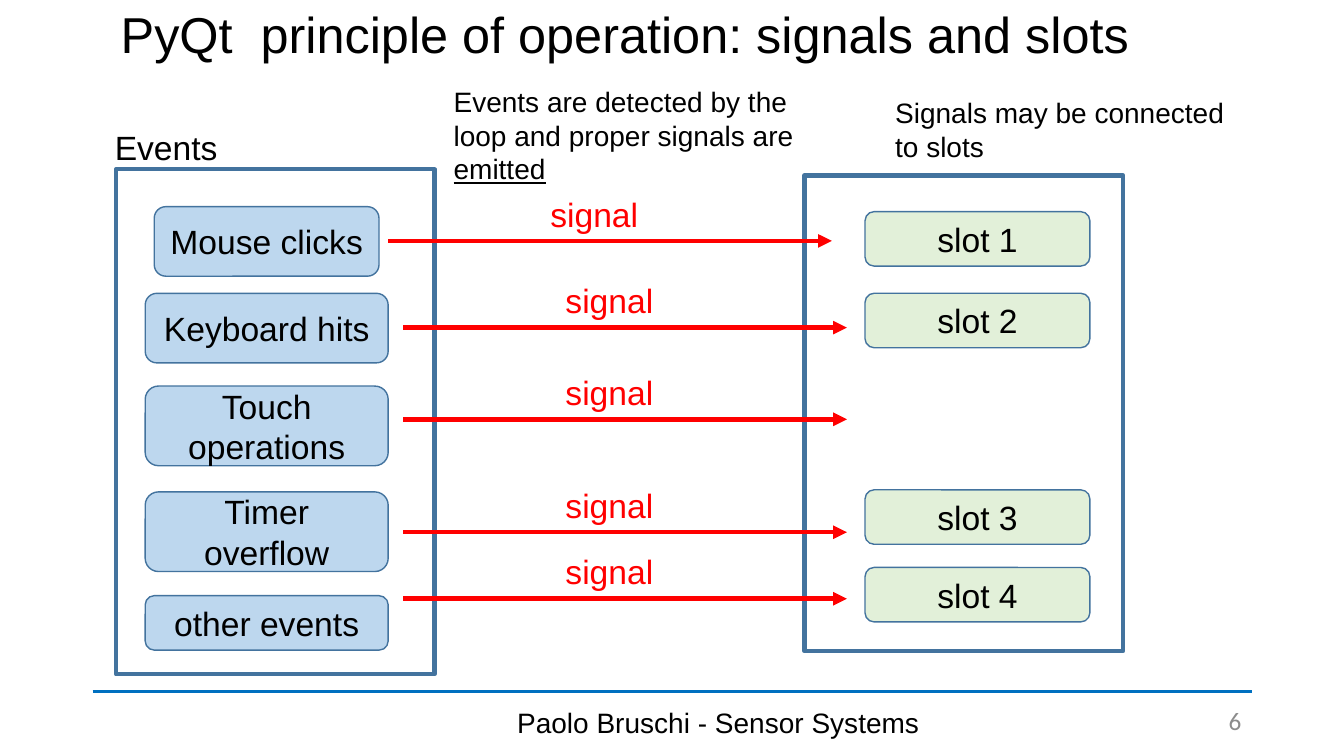
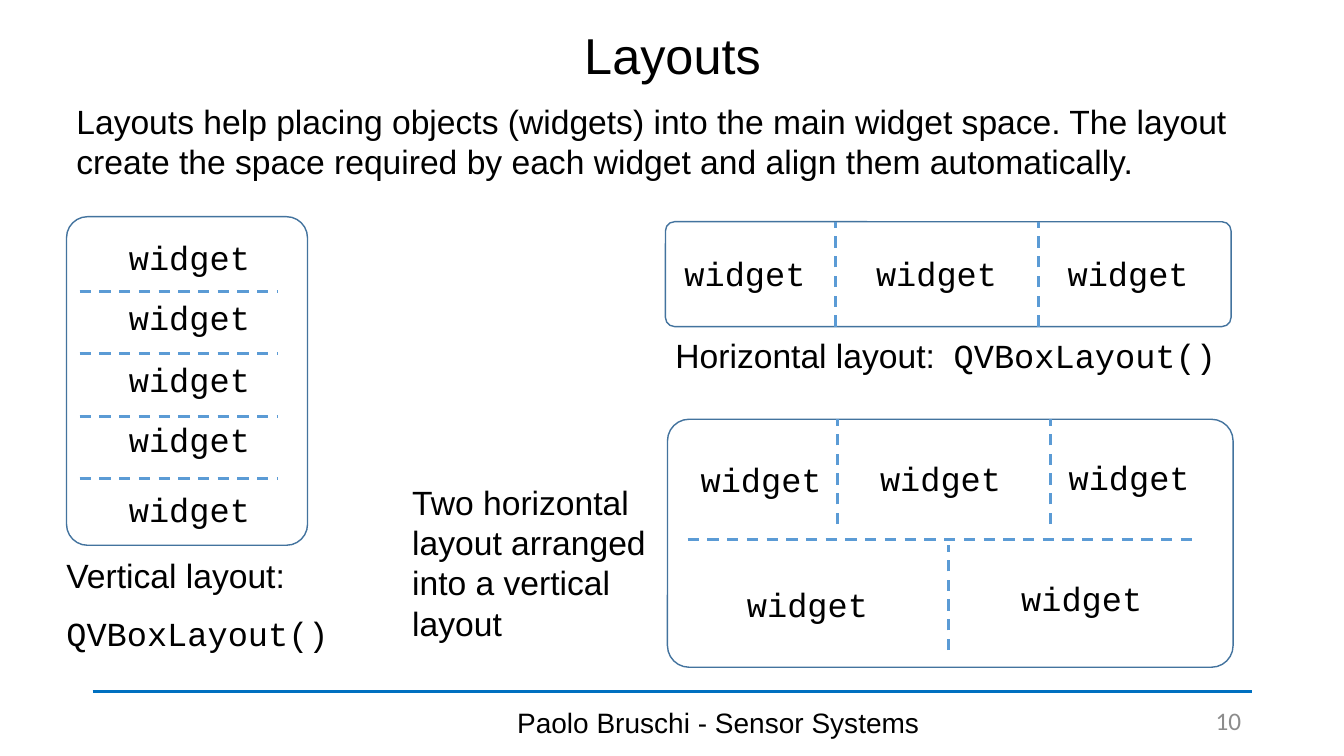
from lxml.etree import SubElement
from pptx import Presentation
from pptx.dml.color import RGBColor
from pptx.enum.dml import MSO_LINE
from pptx.enum.shapes import MSO_CONNECTOR, MSO_SHAPE
from pptx.enum.text import MSO_ANCHOR, PP_ALIGN
from pptx.oxml.ns import qn
from pptx.util import Inches, Pt

BLACK = RGBColor(0x00, 0x00, 0x00)
GRAY = RGBColor(0x8C, 0x8C, 0x8C)
RED = RGBColor(0xFF, 0x00, 0x00)
RULE_BLUE = RGBColor(0x00, 0x70, 0xC0)
OUTLINE_BLUE = RGBColor(0x43, 0x73, 0x9E)
DASH_BLUE = RGBColor(0x5B, 0x9B, 0xD5)
EVENT_FILL = RGBColor(0xBD, 0xD7, 0xEE)
SLOT_FILL = RGBColor(0xE2, 0xF0, 0xD9)
SANS = "Arial"
MONO = "Courier New"


def add_box(s, x, y, w, h, text="", kind=None, fill=None, weight=1, size=24,
            color=BLACK, font=SANS, align=PP_ALIGN.LEFT, anchor=MSO_ANCHOR.TOP,
            wrap=True, after=12):
    at = [Inches(v) for v in (x, y, w, h)]
    if kind is None:
        sp = s.shapes.add_textbox(*at)
    else:
        sp = s.shapes.add_shape(kind, *at)
        sp.shadow.inherit = False
        sp.line.color.rgb = OUTLINE_BLUE
        sp.line.width = Pt(weight)
        if fill is None:
            sp.fill.background()
        else:
            sp.fill.solid()
            sp.fill.fore_color.rgb = fill
        align, anchor, after = PP_ALIGN.CENTER, MSO_ANCHOR.MIDDLE, 0
    tf = sp.text_frame
    tf.word_wrap = wrap
    tf.vertical_anchor = anchor
    tf.text = text
    for p in tf.paragraphs:
        p.alignment = align
        p.space_after = Pt(after)
        p.font.size = Pt(size)
        p.font.name = font
        p.font.color.rgb = color
        for r in p.runs:
            r.font.size = Pt(size)
            r.font.name = font
            r.font.color.rgb = color
    return sp


def add_line(s, x1, y1, x2, y2, color, weight, dashed=False, arrow=False):
    c = s.shapes.add_connector(MSO_CONNECTOR.STRAIGHT, Inches(x1), Inches(y1), Inches(x2), Inches(y2))
    c.line.color.rgb = color
    c.line.width = Pt(weight)
    if dashed:
        c.line.dash_style = MSO_LINE.DASH
    if arrow:
        SubElement(c.line._get_or_add_ln(), qn("a:tailEnd"), type="triangle")
    SubElement(c._element.spPr, qn("a:effectLst"))


prs = Presentation()
prs.slide_width = Inches(13.33)
prs.slide_height = Inches(7.5)

slides = []
for title, x, y, number in [
    ("PyQt  principle of operation: signals and slots", 0.45, 0.01, "6"),
    ("Layouts", 0.92, 0.22, "10"),
]:
    s = prs.slides.add_slide(prs.slide_layouts[5])
    slides.append(s)
    sp = s.shapes.title
    sp.left, sp.top, sp.width, sp.height = Inches(x), Inches(y), Inches(11.5), Inches(0.72)
    tf = sp.text_frame
    tf.text = title
    tf.vertical_anchor = MSO_ANCHOR.MIDDLE
    p = tf.paragraphs[0]
    p.alignment = PP_ALIGN.CENTER
    p.line_spacing = 0.9
    r = p.runs[0]
    r.font.size = Pt(36)
    r.font.name = SANS
    r.font.color.rgb = BLACK
    add_line(s, 0.92, 6.86, 12.42, 6.86, RULE_BLUE, 2.75)
    add_box(s, 5.03, 6.95, 4.22, 0.44, "Paolo Bruschi - Sensor Systems", size=20, after=0)
    add_box(s, 11.45, 6.95, 0.96, 0.4, number, size=18, color=GRAY, font="Calibri",
            align=PP_ALIGN.RIGHT, anchor=MSO_ANCHOR.MIDDLE, after=0)

signals, layouts = slides

add_box(signals, 1.15, 1.68, 3.16, 5.01, kind=MSO_SHAPE.RECTANGLE, weight=3)
add_box(signals, 7.98, 1.74, 3.16, 4.72, kind=MSO_SHAPE.RECTANGLE, weight=3)

for text, x, y, w, h in [
    ("Mouse clicks", 1.53, 2.05, 2.23, 0.69),
    ("Keyboard hits", 1.44, 2.91, 2.41, 0.69),
    ("Touch operations", 1.44, 3.83, 2.41, 0.79),
    ("Timer overflow", 1.44, 4.88, 2.41, 0.79),
    ("other events", 1.44, 5.91, 2.41, 0.54),
]:
    add_box(signals, x, y, w, h, text, MSO_SHAPE.ROUNDED_RECTANGLE, EVENT_FILL)

for i, y in enumerate([2.1, 2.91, 4.86, 5.63], 1):
    add_box(signals, 8.58, y, 2.23, 0.54, f"slot {i}", MSO_SHAPE.ROUNDED_RECTANGLE, SLOT_FILL)

for x, y in [(3.85, 2.39), (4, 3.25), (4, 4.16), (4, 5.28), (4, 5.94)]:
    add_line(signals, x, y, x + 4.4, y, RED, 3.25, arrow=True)
    add_box(signals, x + 1.51, y - 0.52, 1.08, 0.5, "signal", color=RED, wrap=False)

add_box(signals, 1.04, 1.21, 1.23, 0.5, "Events", wrap=False)
add_box(signals, 8.78, 0.9, 3.64, 0.77, "Signals may be connected to slots", size=20)
sp = add_box(signals, 4.4, 0.79, 3.95, 1.11,
             "Events are detected by the loop and proper signals are ", size=20)
r = sp.text_frame.paragraphs[0].add_run()
r.text = "emitted"
r.font.underline = True

for x, y, w, h in [(0.66, 2.15, 2.39, 3.26), (6.6, 2.2, 5.61, 1.04), (6.62, 4.16, 5.61, 2.46)]:
    sp = add_box(layouts, x, y, w, h, kind=MSO_SHAPE.ROUNDED_RECTANGLE)
    sp.adjustments[0] = 0.087

dividers = [(0.79, 2.89 + 0.62 * i, 2.76, 2.89 + 0.62 * i) for i in range(4)]
dividers += [(x, y + 1.04, x, y) for x, y in [(8.29, 2.2), (10.3, 2.2), (8.31, 4.16), (10.42, 4.16), (9.41, 5.41)]]
dividers.append((6.82, 5.35, 11.9, 5.35))
for ends in dividers:
    add_line(layouts, *ends, DASH_BLUE, 2, dashed=True)

widgets = [(1.18, y) for y in (2.3, 2.9, 3.51, 4.11, 4.8)]
widgets += [(6.69 + 1.9 * i, 2.46) for i in range(3)]
widgets += [(6.85, 4.5), (8.63, 4.49), (10.5, 4.48), (7.31, 5.74), (10.03, 5.68)]
for x, y in widgets:
    add_box(layouts, x, y, 1.41, 0.5, "widget", font=MONO, wrap=False)

add_box(layouts, 0.66, 0.95, 11.9, 0.91,
        "Layouts help placing objects (widgets) into the main widget space. "
        "The layout create the space required by each widget and align them automatically.")
add_box(layouts, 3.99, 4.73, 2.84, 1.72, "Two horizontal layout arranged into a vertical layout")

sp = add_box(layouts, 0.56, 5.46, 2.95, 1.08, "Vertical layout:\nQVBoxLayout()")
sp.text_frame.paragraphs[1].runs[0].font.name = MONO
sp = add_box(layouts, 6.6, 3.27, 5.61, 0.5, "Horizontal layout:  ")
r = sp.text_frame.paragraphs[0].add_run()
r.text = "QVBoxLayout()"
r.font.name = MONO

for sp in (sp for s in slides for sp in s.shapes if sp.has_text_frame):
    for p in sp.text_frame.paragraphs:
        for r in p.runs[1:]:
            r.font.size = p.runs[0].font.size
            r.font.color.rgb = BLACK
            r.font.name = r.font.name or SANS

prs.save("out.pptx")
